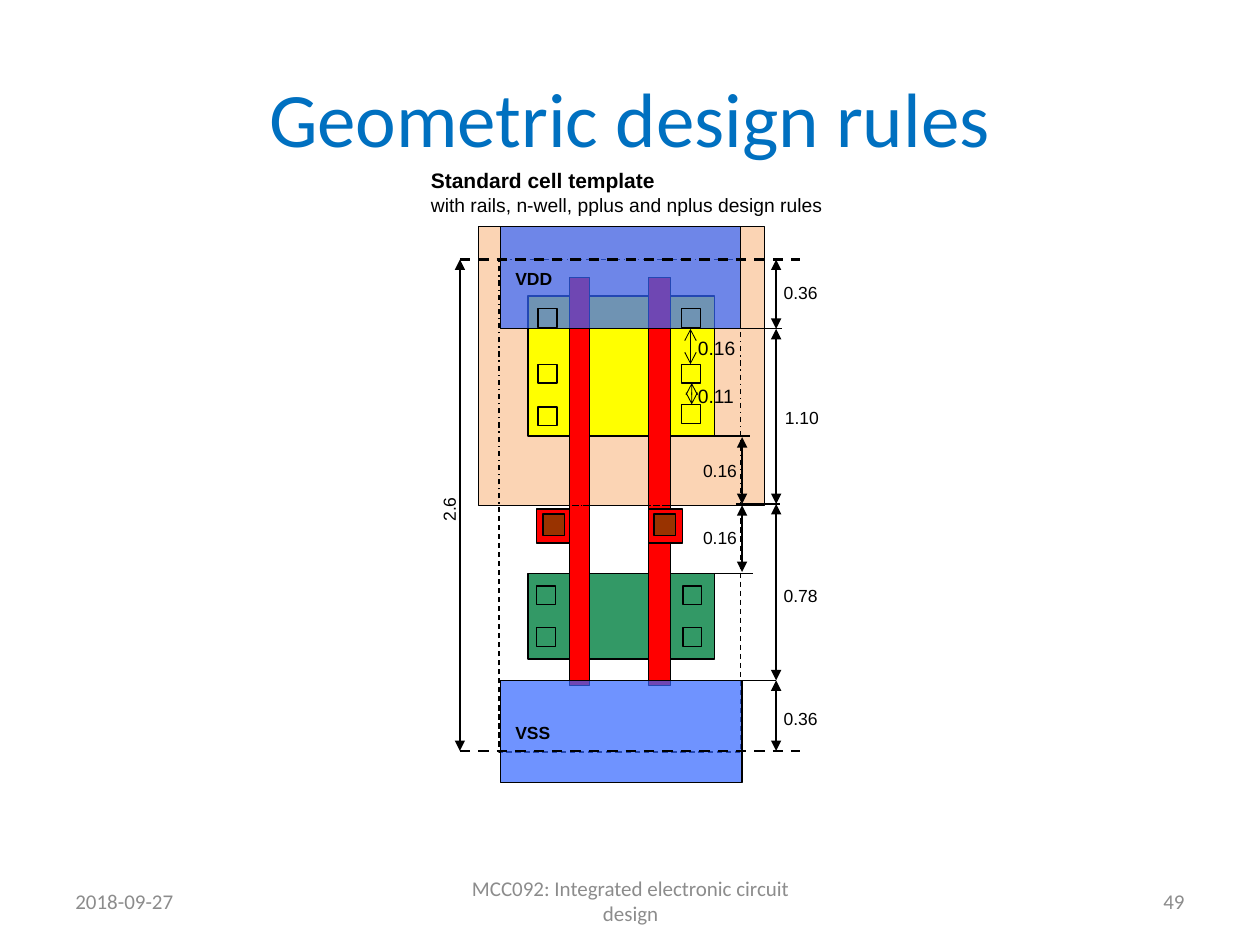
from dataclasses import dataclass
from typing import Optional

from pptx import Presentation
from pptx.dml.color import RGBColor
from pptx.enum.dml import MSO_LINE
from pptx.enum.shapes import MSO_CONNECTOR, MSO_SHAPE
from pptx.enum.text import MSO_ANCHOR, PP_ALIGN
from pptx.oxml.ns import qn
from pptx.util import Inches, Pt
from lxml import etree

RECTANGLE, STRAIGHT = MSO_SHAPE.RECTANGLE, MSO_CONNECTOR.STRAIGHT
DASH, DASH_DOT = MSO_LINE.DASH, MSO_LINE.DASH_DOT
TOP, MIDDLE = MSO_ANCHOR.TOP, MSO_ANCHOR.MIDDLE
LEFT, CENTER, RIGHT = PP_ALIGN.LEFT, PP_ALIGN.CENTER, PP_ALIGN.RIGHT

COLORS = {
    "black": "000000", "title": "0070C0", "footer": "8C8C8C",
    "nwell": "FBD4B4", "poly": "FF0000", "pplus": "FFFF00",
    "nplus": "339966", "metal": "3366FF", "contact": "993300",
}
DEFAULT_INSETS = (0.1, 0.05)
LABEL_INSETS = (0.07, 0.04)

# Heights of the cell's dimension levels
VDD_AXIS, VDD_EDGE, WELL_EDGE, VSS_EDGE, VSS_AXIS = 2.06, 2.61, 4.0, 5.4, 5.96
DIMENSION_X, SPACING_X, HEIGHT_X = 6.16, 5.89, 3.65
CONTACT_SIZE = 0.15


@dataclass
class Box:
    left: float
    top: float
    width: float
    height: float
    fill: Optional[str] = None
    dash: Optional[int] = None
    opacity: Optional[int] = None


@dataclass
class Line:
    x1: float
    y1: float
    x2: float
    y2: float
    arrow: Optional[str] = None
    width: float = 0.75
    dash: Optional[int] = None


@dataclass
class Text:
    left: float
    top: float
    width: float
    height: float
    lines: tuple
    size: float = 10
    bold: bool = False
    font: str = "Arial"
    color: str = "black"
    align: int = LEFT
    anchor: int = TOP
    insets: tuple = LABEL_INSETS
    vertical: bool = False


def rgb(name: str) -> RGBColor:
    return RGBColor.from_string(COLORS[name])


def draw_box(page, box: Box) -> None:
    shape = page.shapes.add_shape(RECTANGLE, Inches(box.left), Inches(box.top),
                                  Inches(box.width), Inches(box.height))
    shape.shadow.inherit = False
    shape.line.color.rgb = rgb("black")
    shape.line.width = Pt(0.75)
    if box.dash is not None:
        shape.line.dash_style = box.dash
    if box.fill is None:
        shape.fill.background()
        return
    shape.fill.solid()
    shape.fill.fore_color.rgb = rgb(box.fill)
    if box.opacity is not None:
        color = shape.fill._xPr.find(qn("a:solidFill"))[0]
        etree.SubElement(color, qn("a:alpha"), val=str(box.opacity * 1000))


def draw_line(page, line: Line) -> None:
    connector = page.shapes.add_connector(STRAIGHT, Inches(line.x1), Inches(line.y1),
                                          Inches(line.x2), Inches(line.y2))
    connector.line.color.rgb = rgb("black")
    connector.line.width = Pt(line.width)
    if line.dash is not None:
        connector.line.dash_style = line.dash
    if line.arrow:
        outline = connector.line._get_or_add_ln()
        for end in ("a:headEnd", "a:tailEnd"):
            etree.SubElement(outline, qn(end), type=line.arrow)
    etree.SubElement(connector._element.spPr, qn("a:effectLst"))


def draw_text(page, text: Text) -> None:
    box = page.shapes.add_textbox(Inches(text.left), Inches(text.top),
                                  Inches(text.width), Inches(text.height))
    frame = box.text_frame
    frame.word_wrap = not text.vertical
    frame.vertical_anchor = text.anchor
    frame.margin_left = frame.margin_right = Inches(text.insets[0])
    frame.margin_top = frame.margin_bottom = Inches(text.insets[1])
    if text.vertical:
        frame._txBody.bodyPr.set("vert", "vert270")
    frame.text = "\n".join(text.lines)
    for para in frame.paragraphs:
        para.alignment = text.align
        para.font.name = text.font
        para.font.size = Pt(text.size)
        para.font.bold = text.bold
        para.font.color.rgb = rgb(text.color)


def draw_contacts(page, positions: list) -> None:
    for left, top in positions:
        draw_box(page, Box(left, top, CONTACT_SIZE, CONTACT_SIZE))


def draw_headings(page) -> None:
    draw_text(page, Text(0.5, 0.3, 9, 1.25, ("Geometric design rules",), 44, font="Calibri",
                         color="title", align=CENTER, anchor=MIDDLE, insets=DEFAULT_INSETS))
    for left, width, words, align in (
        (0.5, 2.33, "2018-09-27", LEFT),
        (3.42, 3.17, "MCC092: Integrated electronic circuit design", CENTER),
        (7.17, 2.33, "49", RIGHT),
    ):
        draw_text(page, Text(left, 6.95, width, 0.4, (words,), 12, font="Calibri",
                             color="footer", align=align, anchor=MIDDLE,
                             insets=DEFAULT_INSETS))
    caption = Text(3.41, 1.29, 3.18, 0.52,
                   ("Standard cell template",
                    "with rails, n-well, pplus and nplus design rules"),
                   11, insets=(0.01, 0.04))
    draw_text(page, caption)
    heading = page.shapes[-1].text_frame.paragraphs[0]
    heading.font.size, heading.font.bold = Pt(12), True


def draw_cell(page) -> None:
    """Draw the mask layers from the n-well up to the metal rails."""
    for layer in (
        Box(3.8, 1.8, 2.27, 2.21, "nwell"),
        Box(4.26, 4.04, 0.27, 0.27, "poly"),
        Box(4.19, 2.35, 1.48, 1.11, "pplus"),
        Box(4.19, 4.55, 1.48, 0.68, "nplus"),
        Box(4.52, 2.2, 0.16, 3.24, "poly"),
        Box(5.15, 2.2, 0.17, 3.24, "poly"),
        Box(5.15, 4.04, 0.27, 0.27, "poly"),
        Box(3.96, 4.01, 1.92, 1.96, dash=DASH),
        Box(3.96, 2.06, 1.92, 1.95, dash=DASH_DOT),
        Box(3.97, 1.8, 1.91, 0.81, "metal", opacity=70),
        Box(3.97, 5.4, 1.92, 0.81, "metal", opacity=70),
        Box(4.31, 4.08, 0.17, 0.17, "contact"),
        Box(5.19, 4.08, 0.17, 0.17, "contact"),
    ):
        draw_box(page, layer)
    draw_contacts(page, [(x, y) for x in (4.27, 5.41) for y in (2.45, 2.89)])
    draw_contacts(page, [(4.27, 3.23), (5.41, 3.21)])
    draw_contacts(page, [(x, y) for x in (4.26, 5.42) for y in (4.65, 4.98)])
    draw_text(page, Text(4.02, 2.09, 0.61, 0.36, ("VDD",), bold=True))
    draw_text(page, Text(4.02, 5.69, 0.45, 0.23, ("VSS",), bold=True))


def draw_dimensions(page) -> None:
    for y in (VDD_AXIS, VSS_AXIS):
        draw_line(page, Line(HEIGHT_X, y, 6.35, y, width=1.5, dash=DASH))
    for left, y in ((5.86, VDD_EDGE), (5.6, 3.46), (5.84, WELL_EDGE),
                    (5.63, 4.55), (5.81, VSS_EDGE)):
        draw_line(page, Line(left, y, left + 0.35, y))

    levels = (VDD_AXIS, VDD_EDGE, WELL_EDGE, VSS_EDGE, VSS_AXIS)
    spans = [(DIMENSION_X, start, end) for start, end in zip(levels, levels[1:])]
    spans += [(HEIGHT_X, VDD_AXIS, VSS_AXIS),
              (SPACING_X, 3.47, WELL_EDGE), (SPACING_X, 4.01, 4.54)]
    for x, start, end in spans:
        draw_line(page, Line(x, start, x, end, "triangle"))
    for x, start, end in ((5.48, VDD_EDGE, 2.89), (5.49, 3.04, 3.21)):
        draw_line(page, Line(x, start, x, end, "arrow", 0.5))

    for left, top, value in ((6.15, 2.2, "0.36"), (6.16, 3.19, "1.10"), (6.15, 4.6, "0.78"),
                             (6.15, 5.58, "0.36"), (5.51, 3.61, "0.16"), (5.51, 4.14, "0.16")):
        draw_text(page, Text(left, top, 0.44, 0.24, (value,)))
    for top, value in ((2.62, "0.16"), (3.0, "0.11")):
        draw_text(page, Text(5.44, top, 0.57, 0.32, (value,), 11, insets=DEFAULT_INSETS))
    draw_text(page, Text(3.41, 3.91, 0.39, 0.27, ("2.6",), vertical=True))


def main() -> None:
    deck = Presentation()
    deck.slide_width, deck.slide_height = Inches(10), Inches(7.5)
    page = deck.slides.add_slide(deck.slide_layouts[6])
    draw_headings(page)
    draw_cell(page)
    draw_dimensions(page)
    deck.save("out.pptx")


if __name__ == "__main__":
    main()
